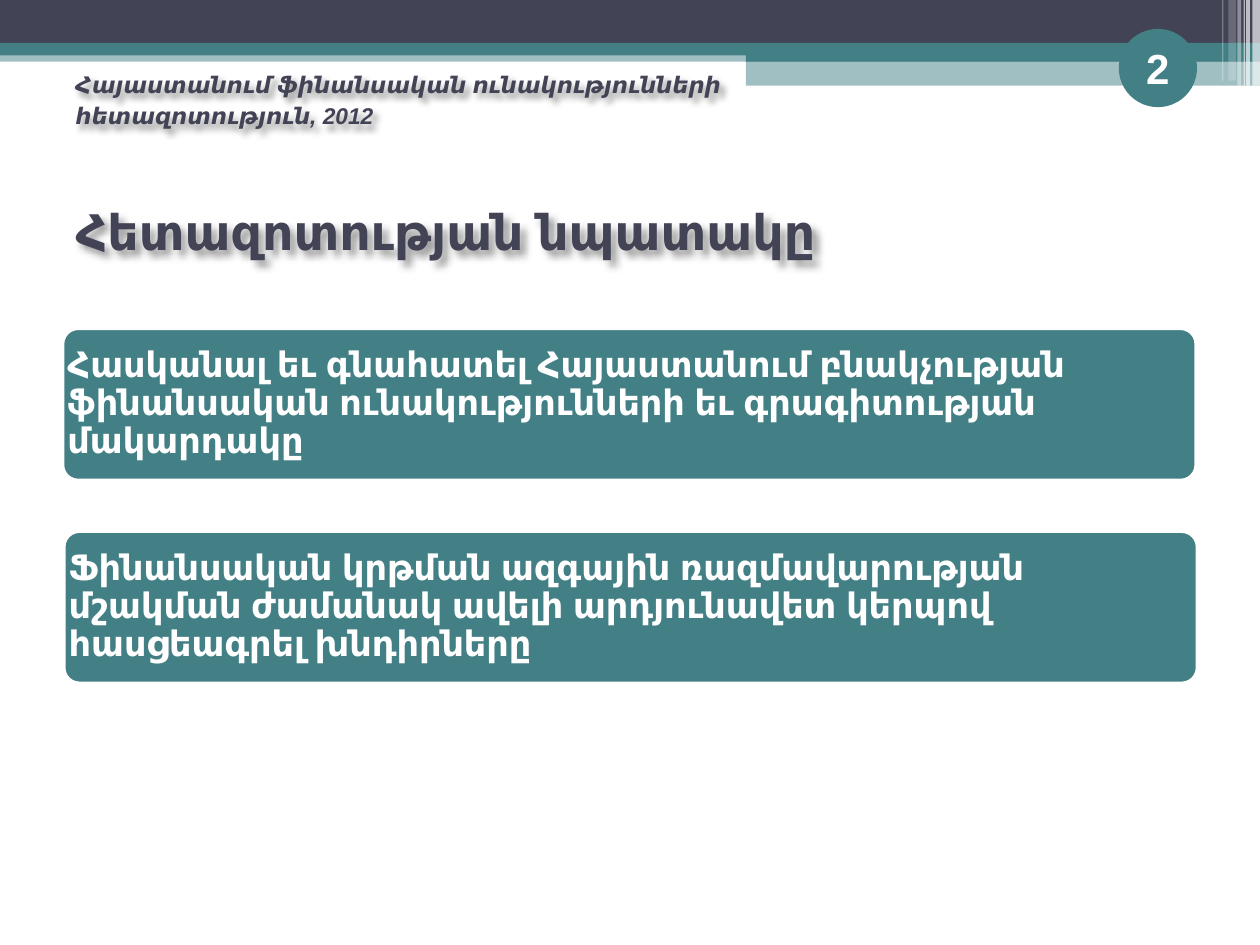
from dataclasses import dataclass

from lxml import etree
from pptx import Presentation
from pptx import util as u
from pptx.dml.color import RGBColor
from pptx.enum import shapes, text
from pptx.oxml import ns

TEAL = RGBColor(0x43, 0x80, 0x86)
SLATE = RGBColor(0x42, 0x44, 0x56)
WHITE = RGBColor(0xFF, 0xFF, 0xFF)
FONT = "Arial"


@dataclass(frozen=True)
class Band:
    left: float
    top: float
    width: float
    height: float
    color: RGBColor
    opacity: int = 100


@dataclass(frozen=True)
class Goal:
    left: float
    top: float
    wording: str


BANDS = [
    Band(0, 0.4, 10, 0.09, TEAL, 50),
    Band(0, 0, 10, 0.34, SLATE),
    Band(0, 0.34, 10, 0.1, TEAL),
    Band(5.92, 0.39, 4.08, 0.1, TEAL),
    Band(5.92, 0.48, 4.08, 0.2, TEAL, 50),
    Band(9.94, 0, 0.06, 0.68, WHITE, 65),
    Band(9.89, 0, 0.03, 0.68, WHITE, 65),
    Band(9.87, 0, 0.01, 0.68, WHITE, 60),
    Band(9.82, 0, 0.03, 0.68, WHITE, 40),
    Band(9.75, 0, 0.06, 0.64, WHITE, 20),
    Band(9.7, 0, 0.01, 0.64, WHITE, 30),
]

GOALS = [
    Goal(0.5, 2.61, "Հասկանալ եւ գնահատել Հայաստանում բնակչության ֆինանսական "
                    "ունակությունների եւ գրագիտության մակարդակը"),
    Goal(0.51, 4.22, "Ֆինանսական կրթման ազգային ռազմավարության մշակման ժամանակ "
                     "ավելի արդյունավետ կերպով հասցեագրել խնդիրները"),
]


def inches(*lengths: float) -> list[u.Length]:
    return [u.Inches(length) for length in lengths]


def add_filled(page, kind, place: tuple, color: RGBColor, line: RGBColor | None = None):
    shape = page.shapes.add_shape(kind, *inches(*place))
    shape.shadow.inherit = False
    shape.fill.solid()
    shape.fill.fore_color.rgb = color
    if line is None:
        shape.line.fill.background()
    else:
        shape.line.color.rgb = line
        shape.line.width = u.Pt(1.5)
    return shape


def add_band(page, band: Band) -> None:
    place = (band.left, band.top, band.width, band.height)
    shape = add_filled(page, shapes.MSO_SHAPE.RECTANGLE, place, band.color)
    if band.opacity < 100:
        color = shape.fill._xPr.find(".//" + ns.qn("a:srgbClr"))
        etree.SubElement(color, ns.qn("a:alpha"), val=str(band.opacity * 1000))


def write(shape, wording: str, size: float, color: RGBColor,
          align=text.PP_ALIGN.LEFT, inset: float | None = None, italic: bool = False):
    """Fill the shape with one bold, vertically centred paragraph and return it."""
    frame = shape.text_frame
    frame.word_wrap = True
    frame.auto_size = text.MSO_AUTO_SIZE.NONE
    frame.vertical_anchor = text.MSO_ANCHOR.MIDDLE
    if inset is not None:
        frame.margin_left = frame.margin_right = u.Inches(inset)
        frame.margin_top = frame.margin_bottom = u.Inches(inset)
    para = frame.paragraphs[0]
    para.alignment = align
    span = para.add_run()
    span.text = wording
    span.font.name = FONT
    span.font.size = u.Pt(size)
    span.font.bold = True
    if italic:
        span.font.italic = True
    span.font.color.rgb = color
    return para


def cast_shadow(shape) -> None:
    """Give the text of an unfilled shape a soft shadow to the lower right."""
    shape.shadow.inherit = False
    effects = shape._element.spPr.find(ns.qn("a:effectLst"))
    shadow = etree.SubElement(effects, ns.qn("a:outerShdw"), blurRad="50800",
                              dist="50800", dir="2700000", algn="tl", rotWithShape="0")
    color = etree.SubElement(shadow, ns.qn("a:srgbClr"), val="000000")
    etree.SubElement(color, ns.qn("a:alpha"), val="40000")


def add_goal(page, goal: Goal) -> None:
    box = add_filled(page, shapes.MSO_SHAPE.ROUNDED_RECTANGLE,
                     (goal.left, goal.top, 8.99, 1.2), TEAL, WHITE)
    box.adjustments[0] = 0.1
    para = write(box, goal.wording, 20, WHITE, inset=0)
    para.line_spacing = 0.9
    para.space_after = u.Pt(7)


def main() -> None:
    deck = Presentation()
    deck.slide_width, deck.slide_height = inches(10, 7.5)
    page = deck.slides.add_slide(deck.slide_layouts[5])

    for band in BANDS:
        add_band(page, band)

    title = page.shapes.title
    title.left, title.top, title.width, title.height = inches(0.5, 1.25, 9, 1.17)
    write(title, "Հետազոտության նպատակը", 28, SLATE)
    cast_shadow(title)

    badge = add_filled(page, shapes.MSO_SHAPE.OVAL, (8.89, 0.24, 0.6, 0.6), TEAL, TEAL)
    write(badge, "2", 24, WHITE, text.PP_ALIGN.CENTER, inset=0)

    header = page.shapes.add_textbox(*inches(0.5, 0.46, 5.42, 0.63))
    para = write(header, "Հայաստանում ֆինանսական ունակությունների հետազոտություն, 2012",
                 13, SLATE, italic=True)
    para.line_spacing = 1.14
    cast_shadow(header)

    for goal in GOALS:
        add_goal(page, goal)

    deck.save("out.pptx")


if __name__ == "__main__":
    main()
